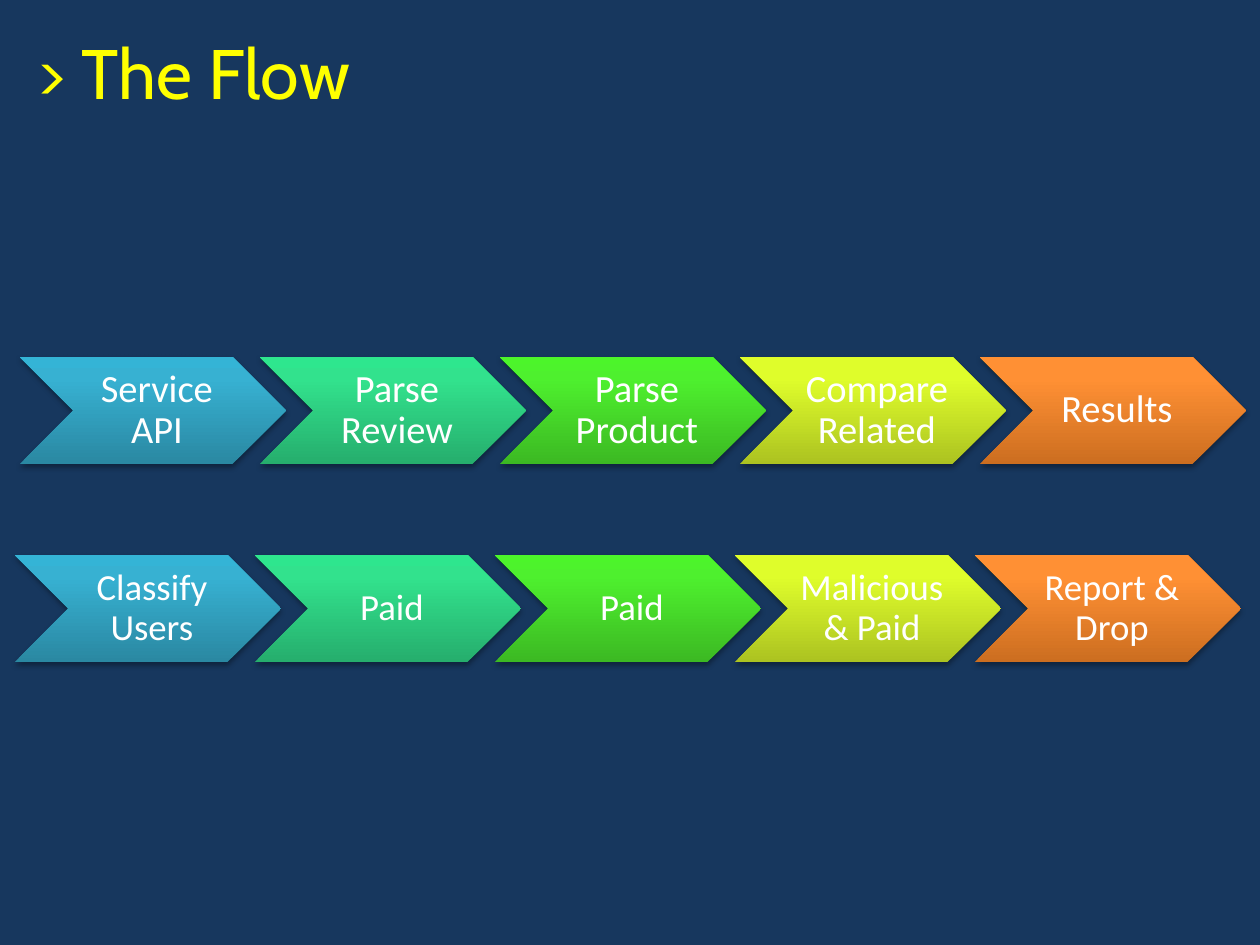
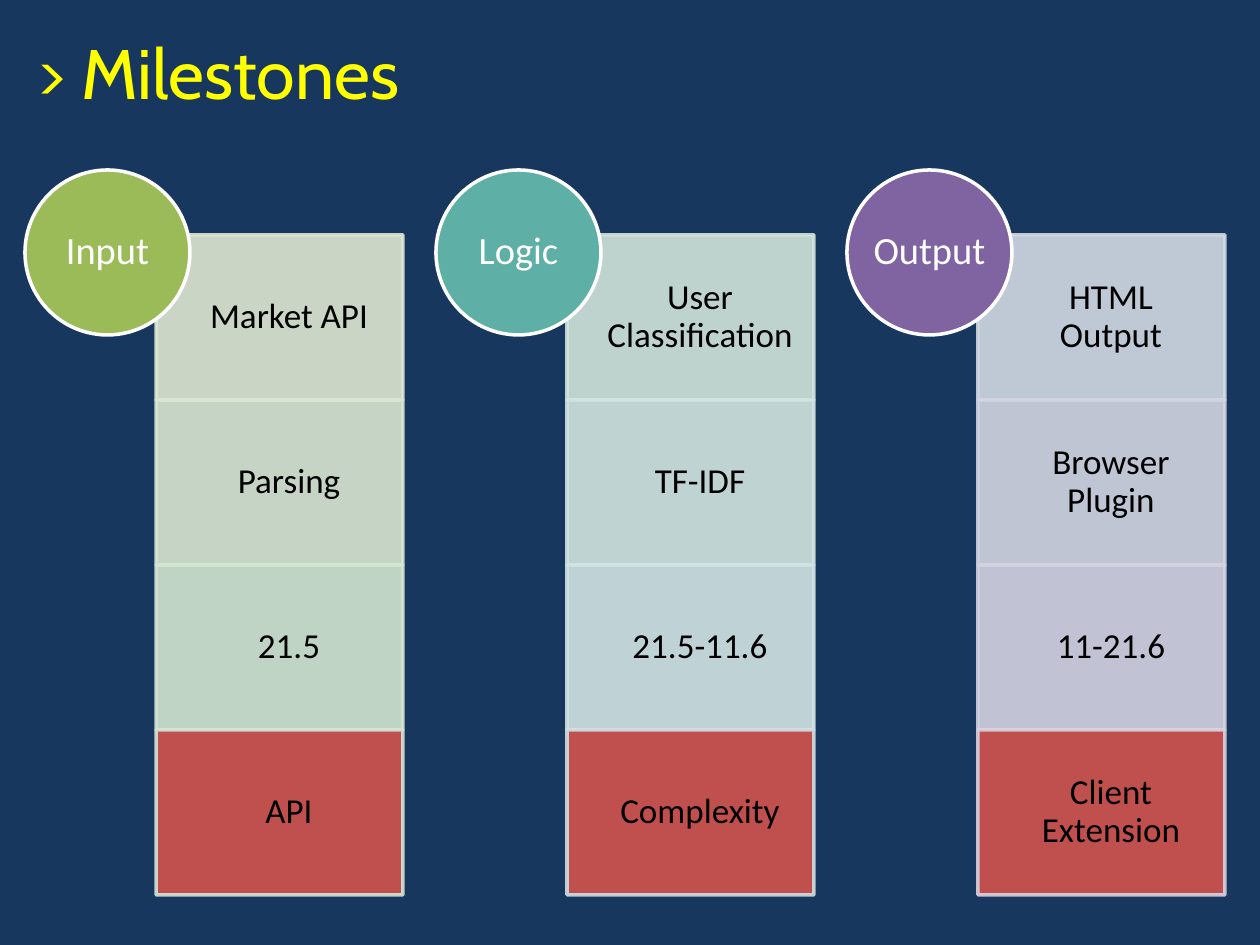
from dataclasses import dataclass

from lxml import etree
from pptx import Presentation
from pptx import util as u
from pptx.dml.color import RGBColor
from pptx.enum import shapes, text
from pptx.oxml import ns

EMU_PER_PX = 914400 / 126


@dataclass(frozen=True)
class Theme:
    background: str = "17375E"
    title: str = "FFFF00"
    light: str = "FFFFFF"
    dark: str = "000000"
    alert: str = "C0504D"
    title_font: str = "Cabin"
    body_font: str = "Calibri"
    title_size: int = 40
    label_size: int = 22
    compact_size: int = 21
    cell_size: int = 20
    line_width: int = 2
    cell_opacity: int = 90


THEME = Theme()

# Gradient colours at 0, 80 and 100 %, running from bottom to top.
STEP_GRADIENTS = [
    ("2A88A2", "37B1D2", "34B4D6"),
    ("26AE6D", "32E28D", "2EE68E"),
    ("3CB923", "4EF02E", "4CF52A"),
    ("ACC321", "DFFD2B", "E1FF2B"),
    ("CC6E20", "FF9034", "FF9136"),
]

# Left, top, text size and step labels of each row.
FLOWS = [
    (20, 357, THEME.label_size,
     ["Service API", "Parse Review", "Parse Product", "Compare Related", "Results"]),
    (15, 555, THEME.compact_size,
     ["Classify Users", "Paid", "Paid", "Malicious & Paid", "Report & Drop"]),
]

# Heading, circle colour, cell labels and cell tints; the last cell is an alert.
MILESTONES = [
    ("Input", "9BBB59", ["Market API", "Parsing", "21.5", "API"],
     ["DEE7D1", "D8E6D1", "D3E6D2", "D2E5D6"]),
    ("Logic", "5EAFA6", ["User Classification", "TF-IDF", "21.5-11.6", "Complexity"],
     ["D2E4DB", "D2E4E0", "D2E3E3", "D2DEE3"]),
    ("Output", "8064A2", ["HTML Output", "Browser Plugin", "11-21.6", "Client Extension"],
     ["D2D9E2", "D3D5E1", "D4D3E1", "D8D3E0"]),
]


def px(length):
    return u.Emu(round(length * EMU_PER_PX))


def set_attributes(target, values):
    for name, value in values.items():
        setattr(target, name, value)


def add_xml_child(parent, tag, **attributes):
    child = etree.SubElement(parent, ns.qn(tag))
    for name, value in attributes.items():
        child.set(name, str(value))
    return child


def write_text(box, words, font, size, color, insets, align, line_spacing=1.0):
    """Fill box with one paragraph; insets are left, top, right, bottom in px."""
    frame = box.text_frame
    left, top, right, bottom = map(px, insets)
    set_attributes(frame, {
        "word_wrap": True,
        "vertical_anchor": text.MSO_ANCHOR.MIDDLE,
        "margin_left": left,
        "margin_top": top,
        "margin_right": right,
        "margin_bottom": bottom,
    })
    para = frame.paragraphs[0]
    set_attributes(para, {"alignment": align, "line_spacing": line_spacing})
    span = para.add_run()
    span.text = words
    set_attributes(span.font, {"name": font, "size": u.Pt(size)})
    span.font.color.rgb = RGBColor.from_string(color)


def write_label(box, words, size, color, insets):
    write_text(box, words, THEME.body_font, size, color, insets,
               text.PP_ALIGN.CENTER, line_spacing=0.9)


def add_shape(slide, kind, left, top, width, height):
    shape = slide.shapes.add_shape(kind, px(left), px(top), px(width), px(height))
    shape.shadow.inherit = False
    return shape


def paint(fill, color, opacity=100):
    fill.solid()
    fill.fore_color.rgb = RGBColor.from_string(color)
    if opacity < 100:
        solid = fill._xPr.find(ns.qn("a:solidFill"))
        add_xml_child(solid[0], "a:alpha", val=opacity * 1000)


def outline(shape, color, opacity=100):
    shape.line.width = u.Pt(THEME.line_width)
    paint(shape.line.fill, color, opacity)


def paint_gradient(shape, colors):
    shape.fill.gradient()
    gradient = shape.fill._xPr.find(ns.qn("a:gradFill"))
    for child in list(gradient):
        gradient.remove(child)
    stops = add_xml_child(gradient, "a:gsLst")
    for percent, color in zip((0, 80, 100), colors):
        stop = add_xml_child(stops, "a:gs", pos=percent * 1000)
        add_xml_child(stop, "a:srgbClr", val=color)
    add_xml_child(gradient, "a:lin", ang=270 * 60000, scaled=0)


def add_soft_shadow(shape):
    effects = shape._element.spPr.find(ns.qn("a:effectLst"))
    shadow = add_xml_child(effects, "a:outerShdw", blurRad=u.Pt(3.1), dist=u.Pt(1.8),
                           dir=90 * 60000, rotWithShape=0)
    color = add_xml_child(shadow, "a:srgbClr", val=THEME.dark)
    add_xml_child(color, "a:alpha", val=35000)


def add_titled_slide(deck, title):
    slide = deck.slides.add_slide(deck.slide_layouts[6])
    paint(slide.background.fill, THEME.background)
    box = slide.shapes.add_textbox(px(25), px(16), px(1134), px(110))
    write_text(box, f"> {title}", THEME.title_font, THEME.title_size, THEME.title,
               (13, 6, 13, 6), text.PP_ALIGN.LEFT)
    return slide


def add_flow(slide, left, top, size, labels):
    pitch, width, height = 240, 266, 107
    for index, (label, colors) in enumerate(zip(labels, STEP_GRADIENTS)):
        step = add_shape(slide, shapes.MSO_SHAPE.CHEVRON,
                         left + index * pitch, top, width, height)
        paint_gradient(step, colors)
        step.line.fill.background()
        add_soft_shadow(step)
        write_label(step, label, size, THEME.light, (11, 3, 3, 3))


def add_milestone(slide, left, heading, color, labels, tints):
    """Stack the cells, then lay the heading circle over their top left corner."""
    side, cell_width, cell_top = 165, 247, 235
    last = len(labels) - 1
    for row, (label, tint) in enumerate(zip(labels, tints)):
        cell = add_shape(slide, shapes.MSO_SHAPE.RECTANGLE,
                         left + 131, cell_top + row * side, cell_width, side)
        if row == last:
            paint(cell.fill, THEME.alert)
        else:
            paint(cell.fill, tint, THEME.cell_opacity)
        outline(cell, tint, THEME.cell_opacity)
        write_label(cell, label, THEME.cell_size, THEME.dark, (39, 20, 20, 20))
    circle = add_shape(slide, shapes.MSO_SHAPE.OVAL, left, 170, side, side)
    paint(circle.fill, color)
    outline(circle, THEME.light)
    write_label(circle, heading, THEME.label_size, THEME.light, (0, 0, 0, 0))


def main():
    deck = Presentation()
    set_attributes(deck, {"slide_width": px(1260), "slide_height": px(945)})

    flow_slide = add_titled_slide(deck, "The Flow")
    for flow in FLOWS:
        add_flow(flow_slide, *flow)

    milestone_slide = add_titled_slide(deck, "Milestones")
    for column, milestone in enumerate(MILESTONES):
        add_milestone(milestone_slide, 25 + column * 411, *milestone)

    deck.save("out.pptx")


if __name__ == "__main__":
    main()
